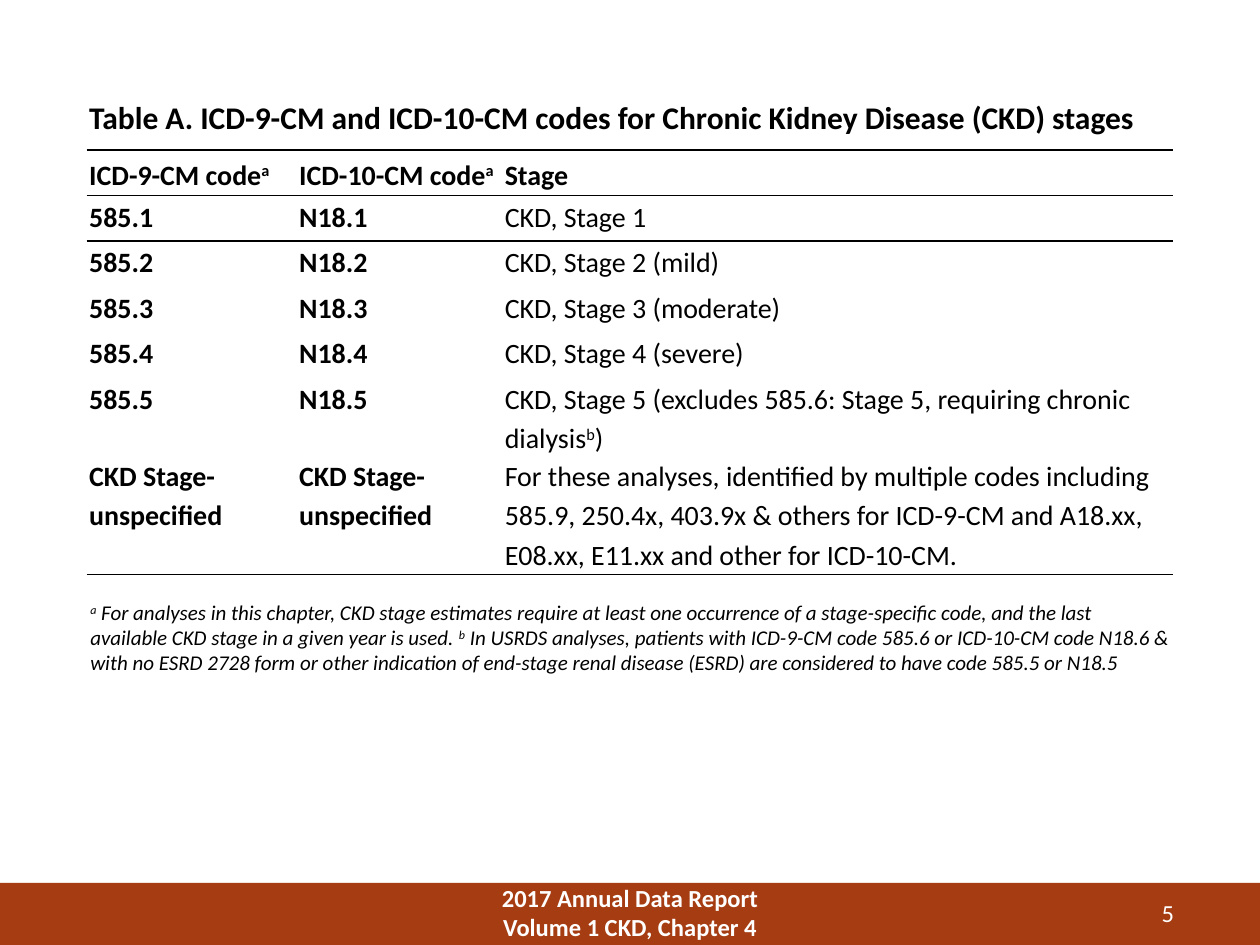
from pptx import Presentation
from pptx.dml.color import RGBColor
from pptx.enum.shapes import MSO_SHAPE
from pptx.enum.text import MSO_ANCHOR, PP_ALIGN
from pptx.oxml import parse_xml
from pptx.oxml.ns import nsdecls
from pptx.util import Pt

RECT = MSO_SHAPE.RECTANGLE
TOP, MIDDLE = MSO_ANCHOR.TOP, MSO_ANCHOR.MIDDLE
LEFT, CENTER, RIGHT = PP_ALIGN.LEFT, PP_ALIGN.CENTER, PP_ALIGN.RIGHT
BLACK = RGBColor(0x00, 0x00, 0x00)
WHITE = RGBColor(0xFF, 0xFF, 0xFF)
RUST = RGBColor(0xA6, 0x3C, 0x12)
NO_GRID = "{2D5ABB26-0587-4C30-8999-92F81FD0307C}"

TITLE = ("Table A. ICD-9-CM and ICD-10-CM codes for "
         "Chronic Kidney Disease (CKD) stages")
# Text between two carets is superscript.
ROWS = [
    ("ICD-9-CM code^a^", "ICD-10-CM code^a^", "Stage"),
    ("585.1", "N18.1", "CKD, Stage 1"),
    ("585.2", "N18.2", "CKD, Stage 2 (mild)"),
    ("585.3", "N18.3", "CKD, Stage 3 (moderate)"),
    ("585.4", "N18.4", "CKD, Stage 4 (severe)"),
    ("585.5", "N18.5", "CKD, Stage 5 (excludes 585.6: Stage 5, "
     "requiring chronic dialysis^b^)"),
    ("CKD Stage-unspecified", "CKD Stage-unspecified",
     "For these analyses, identified by multiple codes including 585.9, "
     "250.4x, 403.9x & others for ICD-9-CM and A18.xx, E08.xx, E11.xx "
     "and other for ICD-10-CM."),
]
NOTE = ("^a^ For analyses in this chapter, CKD stage estimates require at "
        "least one occurrence of a stage-specific code, and the last "
        "available CKD stage in a given year is used. ^b^ In USRDS analyses, "
        "patients with ICD-9-CM code 585.6 or ICD-10-CM code N18.6 & with no "
        "ESRD 2728 form or other indication of end-stage renal disease (ESRD) "
        "are considered to have code 585.5 or N18.5")
WIDTHS = [120, 117.5, 383.5]
HEIGHTS = [28.8] + [26] * 5 + [43.5, 68.5]


class Deck:
    face = "Calibri"

    def __init__(self, slide):
        self.slide = slide

    def fill(self, para, text, size, color=BLACK, bold=False, italic=False,
             align=LEFT):
        """Put styled text, with its superscripts, into a paragraph."""
        para.alignment = align
        font = para.font
        font.name, font.size = self.face, Pt(size)
        font.bold, font.italic = bold, italic
        font.color.rgb = color
        for i, part in enumerate(text.split("^")):
            if part:
                run = para.add_run()
                run.text = part
                if i % 2:
                    run._r.get_or_add_rPr().set("baseline", "30000")

    def bar(self, x, y, w, h, color):
        shape = self.slide.shapes.add_shape(RECT, Pt(x), Pt(y), Pt(w), Pt(h))
        shape.shadow.inherit = False
        shape.fill.solid()
        shape.fill.fore_color.rgb = color
        shape.line.fill.background()

    def text(self, x, y, w, h, lines, size, **style):
        box = self.slide.shapes.add_textbox(Pt(x), Pt(y), Pt(w), Pt(h))
        frame = box.text_frame
        frame.word_wrap = True
        for i, line in enumerate(lines):
            para = frame.add_paragraph() if i else frame.paragraphs[0]
            self.fill(para, line, size, **style)

    def table(self, x, y, widths, heights):
        frame = self.slide.shapes.add_table(
            len(heights), len(widths), Pt(x), Pt(y),
            Pt(sum(widths)), Pt(sum(heights)))
        table = frame.table
        table.first_row = table.horz_banding = False
        table._tbl.tblPr.find("{*}tableStyleId").text = NO_GRID
        for col, width in zip(table.columns, widths):
            col.width = Pt(width)
        for row, height in zip(table.rows, heights):
            row.height = Pt(height)
        return table

    def cell(self, cell, text, size, bold, anchor=TOP):
        cell.margin_left = cell.margin_right = Pt(1.5)
        cell.margin_top = cell.margin_bottom = 0
        cell.vertical_anchor = anchor
        cell.fill.background()
        para = cell.text_frame.paragraphs[0]
        self.fill(para, text, size, bold=bold)
        return para

    def rule(self, cell, sides):
        """Draw black borders on the given sides, "T" before "B"."""
        props = cell._tc.get_or_add_tcPr()
        for i, side in enumerate(sides):
            props.insert(i, parse_xml(
                f'<a:ln{side} {nsdecls("a")} w="{Pt(1)}"><a:solidFill>'
                f'<a:srgbClr val="{BLACK}"/></a:solidFill></a:ln{side}>'))


def main():
    prs = Presentation()
    prs.slide_width, prs.slide_height = Pt(720), Pt(540)
    deck = Deck(prs.slides.add_slide(prs.slide_layouts[6]))

    deck.bar(0, 504.5, 720, 35.5, RUST)
    deck.text(258, 501, 204, 39,
              ["2017 Annual Data Report", "Volume 1 CKD, Chapter 4"], 14,
              color=WHITE, bold=True, align=CENTER)
    deck.text(606, 509.5, 72, 22, ["5"], 14, color=WHITE, align=RIGHT)

    table = deck.table(49.5, 57, WIDTHS, HEIGHTS)
    head = table.cell(0, 0)
    head.merge(table.cell(0, 2))
    deck.cell(head, TITLE, 18, True).space_after = Pt(6)
    for c in range(3):
        deck.rule(table.cell(0, c), "B")

    edges = {1: "TB", 2: "T", len(ROWS): "B"}
    for r, row in enumerate(ROWS, 1):
        for c, text in enumerate(row):
            cell = table.cell(r, c)
            para = deck.cell(cell, text, 16, r == 1 or c < 2,
                             MIDDLE if r == 1 else TOP)
            para.line_spacing = 1.15
            deck.rule(cell, edges.get(r, ""))

    deck.text(44.5, 339, 633, 51, [NOTE], 12, italic=True)
    prs.save("out.pptx")


if __name__ == "__main__":
    main()
